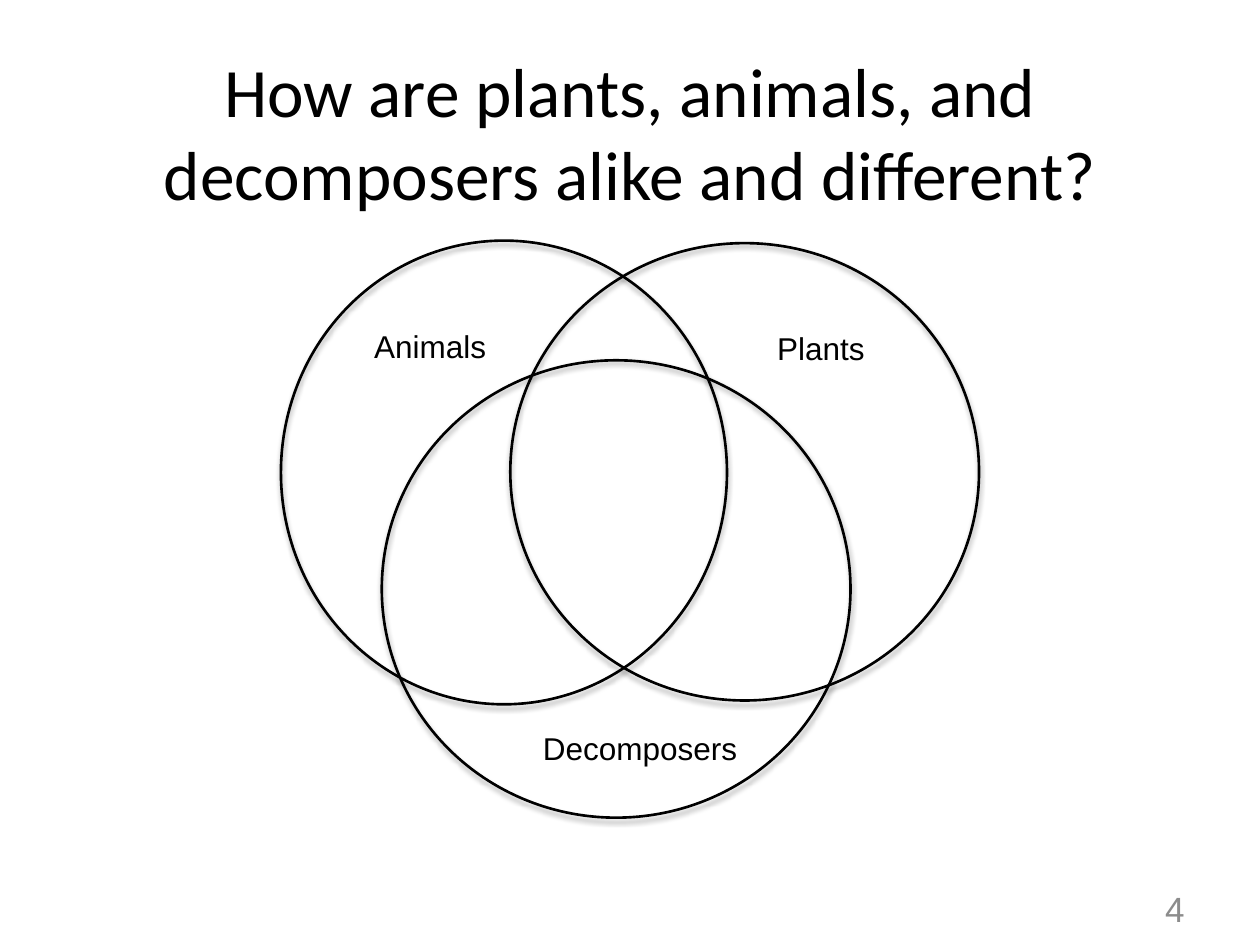
from dataclasses import dataclass

from lxml import etree
from pptx import Presentation
from pptx.dml.color import RGBColor
from pptx.enum.shapes import MSO_SHAPE
from pptx.enum.text import MSO_ANCHOR, MSO_AUTO_SIZE, PP_ALIGN
from pptx.oxml.ns import qn
from pptx.util import Inches, Pt

OVAL = MSO_SHAPE.OVAL
MIDDLE, TOP = MSO_ANCHOR.MIDDLE, MSO_ANCHOR.TOP
LEFT, CENTER, RIGHT = PP_ALIGN.LEFT, PP_ALIGN.CENTER, PP_ALIGN.RIGHT
NO_AUTOFIT = MSO_AUTO_SIZE.NONE

QUESTION = ("How are plants, animals, and decomposers alike and different?", (0.5, 0.5, 9, 1.09))
PAGE_NUMBER = ("4", (7.17, 7.01, 2.33, 0.4))
SETS = [
    ("Animals", (2.23, 1.91, 3.54, 3.68), (2.87, 2.55, 1.08, 0.3)),
    ("Plants", (4.05, 1.93, 3.72, 3.63), (6.07, 2.56, 0.9, 0.3)),
    ("Decomposers", (3.03, 2.86, 3.72, 3.63), (4.21, 5.74, 1.74, 0.3)),
]


@dataclass(frozen=True)
class Theme:
    ink: RGBColor = RGBColor(0, 0, 0)
    muted: RGBColor = RGBColor(0x8C, 0x8C, 0x8C)
    title_font: str = "Calibri"
    body_font: str = "Arial"
    title_size: float = 39.6
    number_size: float = 20
    label_size: float = 18
    outline: float = 1.5
    shadow_blur: float = 3.1
    shadow_distance: float = 1.8
    shadow_opacity: int = 35


THEME = Theme()


def inches(box):
    return [Inches(length) for length in box]


def write(frame, wording, font, size, color, align, anchor, wrap=True):
    frame.text = wording
    frame.word_wrap = wrap
    frame.auto_size = NO_AUTOFIT
    frame.vertical_anchor = anchor
    paragraph = frame.paragraphs[0]
    paragraph.alignment = align
    style = paragraph.runs[0].font
    style.name, style.size = font, Pt(size)
    style.color.rgb = color


def add_soft_shadow(circle):
    circle.shadow.inherit = False
    effects = circle._element.spPr.find(qn("a:effectLst"))
    shadow = etree.SubElement(
        effects, qn("a:outerShdw"),
        blurRad=str(Pt(THEME.shadow_blur)), dist=str(Pt(THEME.shadow_distance)),
        dir=str(90 * 60000), rotWithShape="0")
    tint = etree.SubElement(shadow, qn("a:srgbClr"), val=str(THEME.ink))
    etree.SubElement(tint, qn("a:alpha"), val=str(THEME.shadow_opacity * 1000))


def add_venn(slide):
    venn = slide.shapes.add_group_shape()
    for _, circle_box, _ in SETS:
        circle = venn.shapes.add_shape(OVAL, *inches(circle_box))
        circle.fill.background()
        circle.line.color.rgb = THEME.ink
        circle.line.width = Pt(THEME.outline)
        add_soft_shadow(circle)
    for name, _, label_box in SETS:
        label = venn.shapes.add_textbox(*inches(label_box))
        write(label.text_frame, name, THEME.body_font, THEME.label_size,
              THEME.ink, LEFT, TOP, wrap=False)


def main():
    deck = Presentation()
    deck.slide_width, deck.slide_height = Inches(10), Inches(7.5)
    slide = deck.slides.add_slide(deck.slide_layouts.get_by_name("Title Only"))

    question, question_box = QUESTION
    title = slide.shapes.title
    title.left, title.top, title.width, title.height = inches(question_box)
    write(title.text_frame, question, THEME.title_font, THEME.title_size,
          THEME.ink, CENTER, MIDDLE)

    number, number_box = PAGE_NUMBER
    page_number = slide.shapes.add_textbox(*inches(number_box))
    write(page_number.text_frame, number, THEME.body_font, THEME.number_size,
          THEME.muted, RIGHT, MIDDLE)

    add_venn(slide)
    deck.save("out.pptx")


if __name__ == "__main__":
    main()
